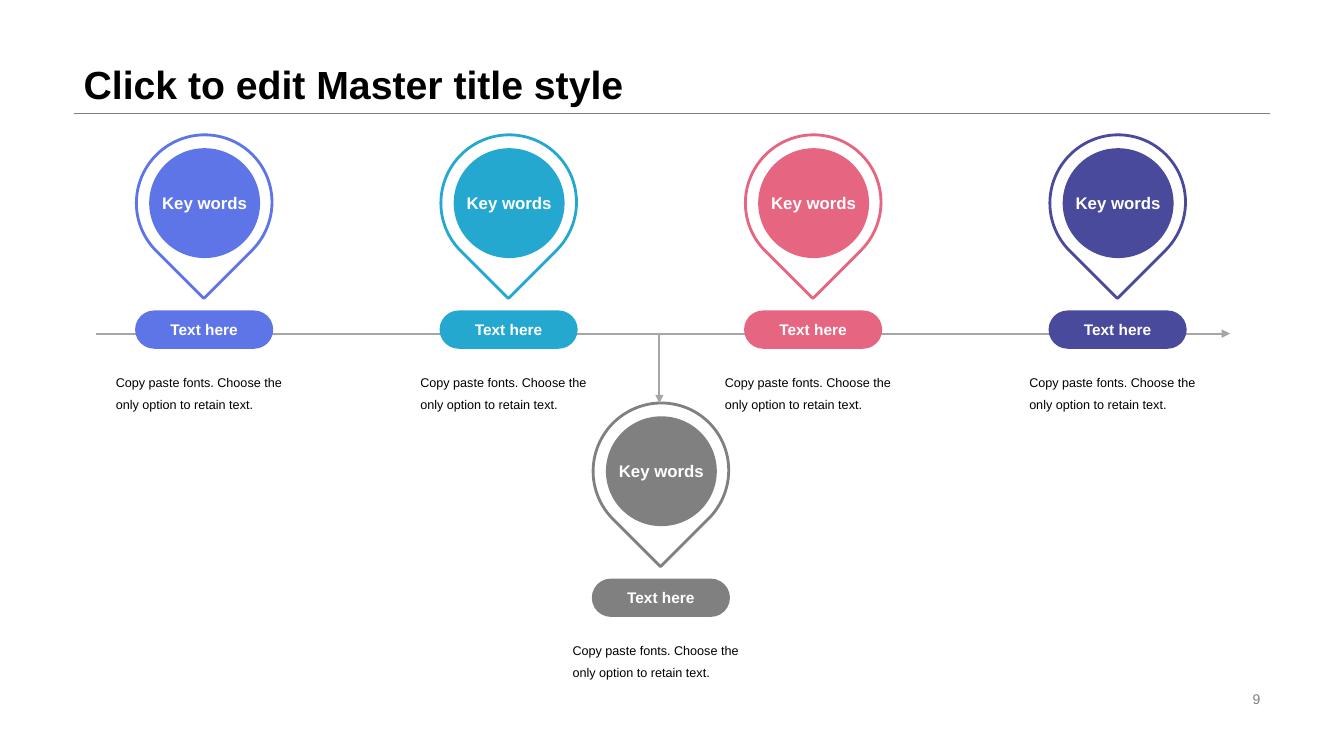
"""Build a timeline slide with four milestone pins and one branch pin."""
import pptx
import pptx.dml.color
import pptx.enum.shapes
import pptx.enum.text
import pptx.oxml.ns
import pptx.util
from lxml import etree

RGB = pptx.dml.color.RGBColor
SHAPE = pptx.enum.shapes.MSO_SHAPE
ALIGN = pptx.enum.text.PP_ALIGN
ANCHOR = pptx.enum.text.MSO_ANCHOR

BLACK = RGB(0x00, 0x00, 0x00)
WHITE = RGB(0xFF, 0xFF, 0xFF)
GREY = RGB(0x80, 0x80, 0x80)
TIMELINE_GREY = RGB(0xA6, 0xA6, 0xA6)
BLUE = RGB(0x5E, 0x75, 0xE8)
CYAN = RGB(0x25, 0xA8, 0xD0)
PINK = RGB(0xE6, 0x65, 0x81)
INDIGO = RGB(0x4A, 0x4A, 0x9D)

EMU_PER_PX = 9144
FIRST_PIN_LEFT = 134
PIN_STEP = 302
PIN_TOP = 134
BRANCH_LEFT = 587
BRANCH_TOP = 400
TIMELINE_Y = 331
BRANCH_X = 654


def px(length):
    return pptx.util.Emu(length * EMU_PER_PX)


def write(frame, text, size, color, bold=False, align=ALIGN.LEFT,
          anchor=ANCHOR.TOP, spacing=1.0, wrap=True, font_name="Arial"):
    frame.auto_size = pptx.enum.text.MSO_AUTO_SIZE.NONE
    frame.word_wrap = wrap
    frame.vertical_anchor = anchor
    paragraph = frame.paragraphs[0]
    paragraph.alignment = align
    paragraph.line_spacing = spacing
    run = paragraph.add_run()
    run.text = text
    run.font.name = font_name
    run.font.size = pptx.util.Pt(size)
    run.font.bold = bold
    run.font.color.rgb = color


class TimelineSlide:
    def __init__(self, slide):
        self.slide = slide

    def title(self, text, left, top, width, height):
        heading = self.slide.shapes.title
        heading.left, heading.top = px(left), px(top)
        heading.width, heading.height = px(width), px(height)
        write(heading.text_frame, text, size=28, color=BLACK, bold=True,
              anchor=ANCHOR.BOTTOM, spacing=0.9)

    def text(self, text, left, top, width, height, **style):
        box = self.slide.shapes.add_textbox(px(left), px(top), px(width), px(height))
        write(box.text_frame, text, **style)

    def shape(self, preset, left, top, width, height, fill, outline=None):
        shape = self.slide.shapes.add_shape(
            preset, px(left), px(top), px(width), px(height))
        shape.shadow.inherit = False
        shape.fill.solid()
        shape.fill.fore_color.rgb = fill
        if outline is None:
            shape.line.fill.background()
        else:
            shape.line.color.rgb = outline
            shape.line.width = pptx.util.Pt(2)
        return shape

    def line(self, start, end, color, weight, arrow=False):
        connector = self.slide.shapes.add_connector(
            pptx.enum.shapes.MSO_CONNECTOR.STRAIGHT,
            px(start[0]), px(start[1]), px(end[0]), px(end[1]))
        connector.line.color.rgb = color
        connector.line.width = pptx.util.Pt(weight)
        qn = pptx.oxml.ns.qn
        if arrow:
            etree.SubElement(connector.line._get_or_add_ln(), qn("a:tailEnd"),
                             type="triangle")
        etree.SubElement(connector._element.spPr, qn("a:effectLst"))

    def milestone(self, left, top, color):
        pin = self.shape(SHAPE.TEAR, left + 1, top, 135, 134, WHITE, color)
        pin.rotation = 135

        keyword = self.shape(SHAPE.OVAL, left + 14, top + 13, 110, 109, color)
        write(keyword.text_frame, "Key words", size=12, color=WHITE, bold=True,
              align=ALIGN.CENTER, anchor=ANCHOR.MIDDLE, wrap=False)

        label = self.shape(SHAPE.ROUNDED_RECTANGLE, left, top + 174, 137, 38, color)
        label.adjustments[0] = 0.5
        write(label.text_frame, "Text here", size=11, color=WHITE, bold=True,
              align=ALIGN.CENTER, anchor=ANCHOR.MIDDLE, wrap=False)

        self.text("Copy paste fonts. Choose the only option to retain text.",
                  left - 29, top + 225, 209, 55, size=9, color=BLACK, spacing=1.5)


def main():
    deck = pptx.Presentation()
    deck.slide_width = pptx.util.Inches(13.33)
    deck.slide_height = pptx.util.Inches(7.5)
    title_only = deck.slide_layouts.get_by_name("Title Only")
    page = TimelineSlide(deck.slides.add_slide(title_only))

    page.line((73, 112), (1260, 112), GREY, 0.25)
    page.title("Click to edit Master title style", 73, 0, 1187, 112)
    page.text("9", 942, 682, 318, 23, size=10, color=GREY,
              align=ALIGN.RIGHT, anchor=ANCHOR.MIDDLE)

    page.line((95, TIMELINE_Y), (1220, TIMELINE_Y), TIMELINE_GREY, 1.5, arrow=True)
    for position, color in enumerate((BLUE, CYAN, PINK, INDIGO)):
        page.milestone(FIRST_PIN_LEFT + position * PIN_STEP, PIN_TOP, color)

    page.milestone(BRANCH_LEFT, BRANCH_TOP, GREY)
    page.line((BRANCH_X, TIMELINE_Y), (BRANCH_X, BRANCH_TOP), TIMELINE_GREY, 1.5,
              arrow=True)

    deck.save("out.pptx")


if __name__ == "__main__":
    main()
